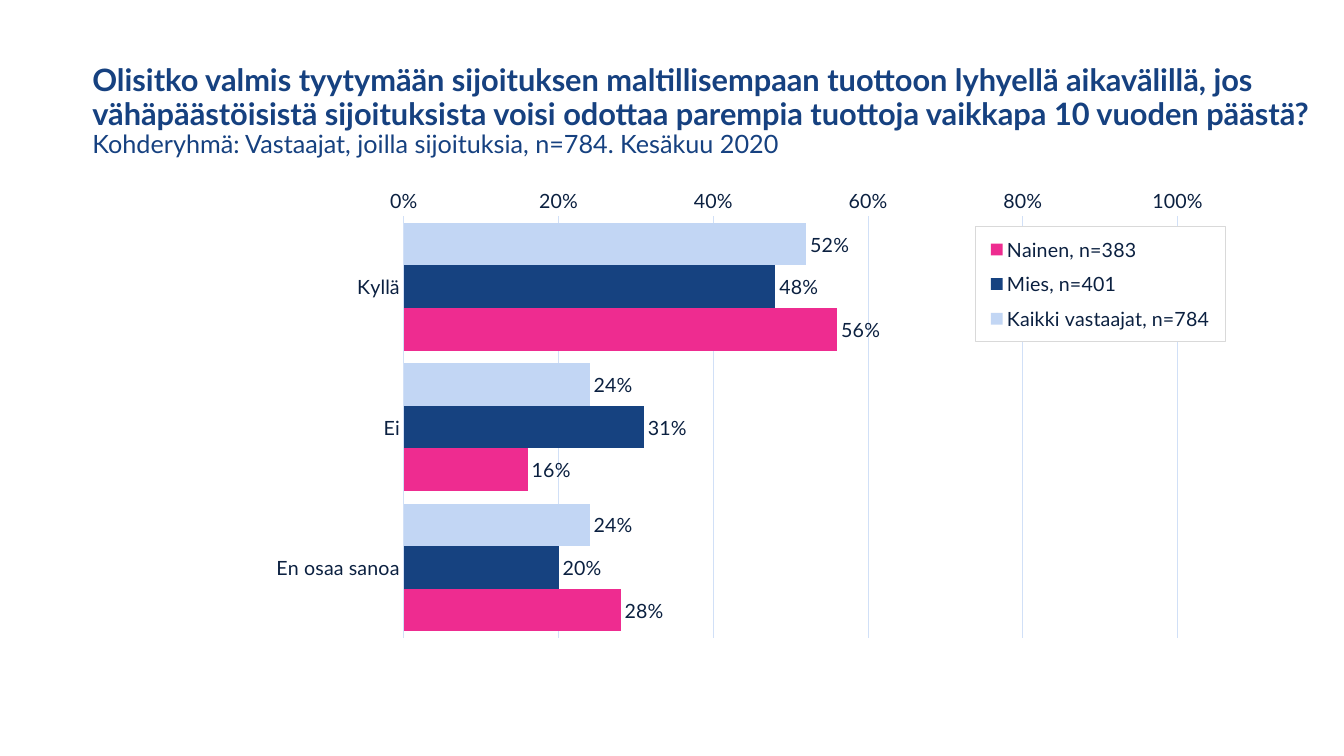
"""Build a slide with a clustered bar chart of survey answers by gender."""
from dataclasses import dataclass

from pptx import Presentation
from pptx.chart.chart import Chart
from pptx.chart.data import CategoryChartData
from pptx.dml.color import RGBColor
from pptx.enum.chart import XL_CHART_TYPE, XL_LABEL_POSITION, XL_LEGEND_POSITION, XL_TICK_MARK
from pptx.enum.text import MSO_ANCHOR
from pptx.oxml import parse_xml
from pptx.oxml.ns import nsdecls
from pptx.slide import Slide
from pptx.text.text import Font
from pptx.util import Cm, Pt

BAR_CLUSTERED = XL_CHART_TYPE.BAR_CLUSTERED
OUTSIDE_END = XL_LABEL_POSITION.OUTSIDE_END
LEGEND_BOTTOM = XL_LEGEND_POSITION.BOTTOM
NO_TICK = XL_TICK_MARK.NONE
MIDDLE = MSO_ANCHOR.MIDDLE

TITLE_BLUE = RGBColor(0x16, 0x41, 0x80)
TEXT_NAVY = RGBColor(0x0B, 0x20, 0x40)
GRID_BLUE = RGBColor(0xD1, 0xE0, 0xF7)
LIGHT_BLUE = RGBColor(0xC2, 0xD6, 0xF4)
DARK_BLUE = RGBColor(0x16, 0x42, 0x80)
PINK = RGBColor(0xEE, 0x2C, 0x90)
LEGEND_BORDER = RGBColor(0xD9, 0xD9, 0xD9)
WHITE = RGBColor(0xFF, 0xFF, 0xFF)

FONT_NAME = "Lato"
PERCENT = "0%"
QUESTION = (
    "Olisitko valmis tyytymään sijoituksen maltillisempaan tuottoon lyhyellä aikavälillä, jos "
    "vähäpäästöisistä sijoituksista voisi odottaa parempia tuottoja vaikkapa 10 vuoden päästä?"
)
TARGET_GROUP = "Kohderyhmä: Vastaajat, joilla sijoituksia, n=784. Kesäkuu 2020"
ANSWERS = ("Kyllä", "Ei", "En osaa sanoa")


@dataclass(frozen=True)
class RespondentGroup:
    name: str
    shares: tuple[float, ...]
    color: RGBColor


GROUPS = (
    RespondentGroup("Kaikki vastaajat, n=784", (0.52, 0.24, 0.24), LIGHT_BLUE),
    RespondentGroup("Mies, n=401", (0.48, 0.31, 0.20), DARK_BLUE),
    RespondentGroup("Nainen, n=383", (0.56, 0.16, 0.28), PINK),
)


def style_font(font: Font, color: RGBColor, size: float = 14) -> None:
    font.name = FONT_NAME
    font.size = Pt(size)
    font.color.rgb = color


def layout_element(x: float, y: float, width: float, height: float, inner: bool = False):
    target = '<c:layoutTarget val="inner"/>' if inner else ""
    return parse_xml(
        f'<c:layout {nsdecls("c")}><c:manualLayout>{target}'
        '<c:xMode val="edge"/><c:yMode val="edge"/>'
        f'<c:x val="{x}"/><c:y val="{y}"/><c:w val="{width}"/><c:h val="{height}"/>'
        "</c:manualLayout></c:layout>"
    )


def add_title(slide: Slide) -> None:
    frame = slide.shapes.add_textbox(Cm(2.08), Cm(0.99), Cm(31.39), Cm(3.68)).text_frame
    frame.word_wrap = True
    frame.vertical_anchor = MIDDLE
    paragraph = frame.paragraphs[0]
    paragraph.line_spacing = 0.9
    style_font(paragraph.font, TITLE_BLUE, 18)
    question = paragraph.add_run()
    question.text = QUESTION
    question.font.size = Pt(22)
    question.font.bold = True
    paragraph.add_line_break()
    paragraph.add_run().text = TARGET_GROUP


def style_axes(chart: Chart) -> None:
    answers = chart.category_axis
    answers.reverse_order = True
    answers.has_major_gridlines = False
    answers.format.line.color.rgb = GRID_BLUE
    answers.format.line.width = Pt(0.75)
    shares = chart.value_axis
    shares.minimum_scale = 0
    shares.maximum_scale = 1
    shares.major_unit = 0.2
    shares.format.line.fill.background()
    shares.tick_labels.number_format = PERCENT
    shares.tick_labels.number_format_is_linked = False
    shares.major_gridlines.format.line.color.rgb = GRID_BLUE
    shares.major_gridlines.format.line.width = Pt(0.75)
    for axis in (answers, shares):
        axis.major_tick_mark = NO_TICK
        axis.minor_tick_mark = NO_TICK
        style_font(axis.tick_labels.font, TEXT_NAVY)


def style_bars(chart: Chart) -> None:
    plot = chart.plots[0]
    plot.gap_width = 30
    plot.overlap = 0
    plot.vary_by_categories = False
    for series, group in zip(plot.series, GROUPS):
        series.invert_if_negative = False
        series.format.fill.solid()
        series.format.fill.fore_color.rgb = group.color
        labels = series.data_labels
        labels.show_value = True
        labels.position = OUTSIDE_END
        labels.number_format = PERCENT
        labels.number_format_is_linked = False
        style_font(labels.font, TEXT_NAVY)


def place_plot_and_legend(chart: Chart) -> None:
    chart.has_legend = True
    legend = chart.legend
    legend.position = LEGEND_BOTTOM
    legend.include_in_layout = False
    style_font(legend.font, TEXT_NAVY)
    plot_area = chart._chartSpace.xpath("c:chart/c:plotArea")[0]
    for parent in (plot_area, legend._element):
        for layout in parent.xpath("c:layout"):
            parent.remove(layout)
    plot_area.insert(0, layout_element(0.27, 0.06, 0.65, 0.81, inner=True))
    legend._element.xpath("c:legendPos")[0].addnext(layout_element(0.75, 0.08, 0.21, 0.22))
    legend._element.xpath("c:overlay")[0].addnext(parse_xml(
        f'<c:spPr {nsdecls("c", "a")}>'
        f'<a:solidFill><a:srgbClr val="{WHITE}"/></a:solidFill>'
        f'<a:ln w="{Pt(0.75)}"><a:solidFill><a:srgbClr val="{LEGEND_BORDER}"/></a:solidFill></a:ln>'
        "</c:spPr>"
    ))


def add_answer_chart(slide: Slide) -> None:
    data = CategoryChartData(number_format=PERCENT)
    data.categories = ANSWERS
    for group in GROUPS:
        data.add_series(group.name, group.shares)
    chart = slide.shapes.add_chart(
        BAR_CLUSTERED, Cm(2.08), Cm(4.67), Cm(30), Cm(13.11), data
    ).chart
    chart.has_title = False
    style_font(chart.font, TEXT_NAVY)
    style_axes(chart)
    style_bars(chart)
    place_plot_and_legend(chart)


def main() -> None:
    presentation = Presentation()
    presentation.slide_width = Cm(33.87)
    presentation.slide_height = Cm(19.05)
    slide = presentation.slides.add_slide(presentation.slide_layouts[6])
    add_title(slide)
    add_answer_chart(slide)
    presentation.save("out.pptx")


if __name__ == "__main__":
    main()
